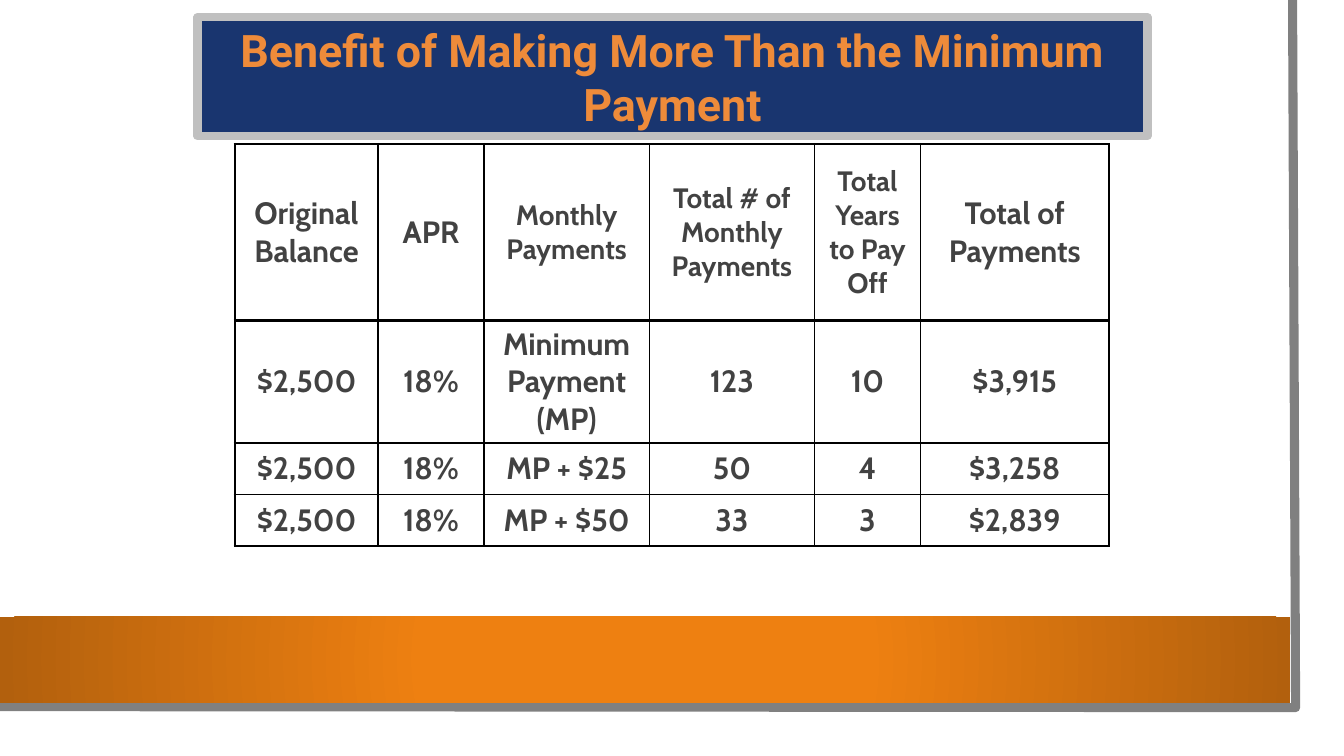
from lxml import etree
from pptx import Presentation
from pptx.dml.color import RGBColor
from pptx.enum.shapes import MSO_SHAPE
from pptx.enum.text import MSO_ANCHOR, MSO_AUTO_SIZE, PP_ALIGN
from pptx.oxml import parse_xml
from pptx.oxml.ns import nsdecls, qn
from pptx.util import Inches, Pt

CENTER, MIDDLE = PP_ALIGN.CENTER, MSO_ANCHOR.MIDDLE
RECTANGLE, NO_AUTOFIT = MSO_SHAPE.RECTANGLE, MSO_AUTO_SIZE.NONE

# Content
TITLE = "Benefit of Making More Than the Minimum Payment"
HEADINGS = [  # text, size, column width
    ("Original Balance", 22, 1.42),
    ("APR", 22, 1.05),
    ("Monthly Payments", 20, 1.64),
    ("Total # of Monthly Payments", 20, 1.64),
    ("Total Years to Pay Off", 20, 1.05),
    ("Total of Payments", 22, 1.87),
]
PLANS = [
    ("$2,500", "18%", "Minimum Payment (MP)", "123", "10", "$3,915"),
    ("$2,500", "18%", "MP + $25", "50", "4", "$3,258"),
    ("$2,500", "18%", "MP + $50", "33", "3", "$2,839"),
]
ROW_HEIGHTS = [1.75, 1.19, 0.51, 0.51]
PLAN_SIZE = 22
EDGE = [(12.82, 0), (12.85, 7.02), (-0.03, 7.01)]


def color(hex_text):
    return RGBColor.from_string(hex_text)


def write(frame, text, size, font, ink):
    frame.word_wrap = True
    paragraph = frame.paragraphs[0]
    paragraph.alignment = CENTER
    run = paragraph.add_run()
    run.text = text
    run.font.size, run.font.name, run.font.bold = Pt(size), font, True
    run.font.color.rgb = color(ink)


def add_panel(shapes, left, top, width, height, fill):
    panel = shapes.add_shape(RECTANGLE, *map(Inches, (left, top, width, height)))
    panel.shadow.inherit = False
    panel.fill.solid()
    panel.fill.fore_color.rgb = color(fill)
    panel.line.fill.background()
    return panel


def set_borders(cell, **widths):
    properties = cell._tc.get_or_add_tcPr()
    for side, width in widths.items():
        properties.append(parse_xml(
            f'<a:ln{side} {nsdecls("a")} w="{Pt(width)}"><a:solidFill>'
            f'<a:srgbClr val="000000"/></a:solidFill></a:ln{side}>'))


prs = Presentation()
prs.slide_width, prs.slide_height = Inches(13.33), Inches(7.5)
slide = prs.slides.add_slide(prs.slide_layouts[5])
shapes = slide.shapes

# Page panel with its grey edge
add_panel(shapes, 0, 0, 13.1, 7.27, "FFFFFF")
points = [(Inches(x), Inches(y)) for x, y in EDGE]
builder = shapes.build_freeform(*points[0])
builder.add_line_segments(points[1:], close=False)
edge = builder.convert_to_shape()
edge.shadow.inherit = False
edge.fill.background()
edge.line.color.rgb = color("808080")
edge.line.width = Pt(6.5)

# Orange band, darker towards its ends
band = add_panel(shapes, 0, 6.12, 12.8, 0.85, "EE8011")
solid = band._element.spPr.find(qn("a:solidFill"))
solid.getparent().replace(solid, parse_xml(
    f'<a:gradFill {nsdecls("a")} rotWithShape="1"><a:gsLst>'
    '<a:gs pos="34000"><a:srgbClr val="EE8011"/></a:gs>'
    '<a:gs pos="100000"><a:srgbClr val="B2600D"/></a:gs></a:gsLst>'
    '<a:path path="circle"><a:fillToRect l="50000" t="50000" r="50000" b="50000"/>'
    '</a:path></a:gradFill>'))

# Title, brought in front of the panel
title = shapes.title
title.left, title.top, title.width, title.height = map(Inches, (1.96, 0.17, 9.42, 1.18))
title.fill.solid()
title.fill.fore_color.rgb = color("002060")
title_color = title._element.spPr.find(".//" + qn("a:srgbClr"))
etree.SubElement(title_color, qn("a:alpha"), val="90000")
title.line.color.rgb = color("C0C0C0")
title.line.width = Pt(6)
title.text_frame.auto_size = NO_AUTOFIT
title.text_frame.vertical_anchor = MIDDLE
write(title.text_frame, TITLE, size=32, font="Roboto", ink="EE8B3A")
shapes._spTree.append(title._element)

# Payment table: heavy outline and heading rule, thin lines inside
labels, sizes, widths = zip(*HEADINGS)
rows = [labels, *PLANS]
last_row, last_column = len(rows) - 1, len(labels) - 1
table = shapes.add_table(len(rows), len(labels), Inches(2.33), Inches(1.43),
                         Inches(sum(widths)), Inches(sum(ROW_HEIGHTS))).table
table.first_row = table.horz_banding = False
for column, width in zip(table.columns, widths):
    column.width = Inches(width)
for r, (values, height) in enumerate(zip(rows, ROW_HEIGHTS)):
    table.rows[r].height = Inches(height)
    for c, value in enumerate(values):
        cell = table.cell(r, c)
        set_borders(cell,
                    L=2 if c == 0 else 1,
                    R=2 if c == last_column else 1,
                    T=2 if r <= 1 else 1,
                    B=2 if r in (0, last_row) else 1)
        cell.fill.background()
        cell.vertical_anchor = MIDDLE
        write(cell.text_frame, value, size=sizes[c] if r == 0 else PLAN_SIZE,
              font="Cabin", ink="424242")

prs.save("out.pptx")
